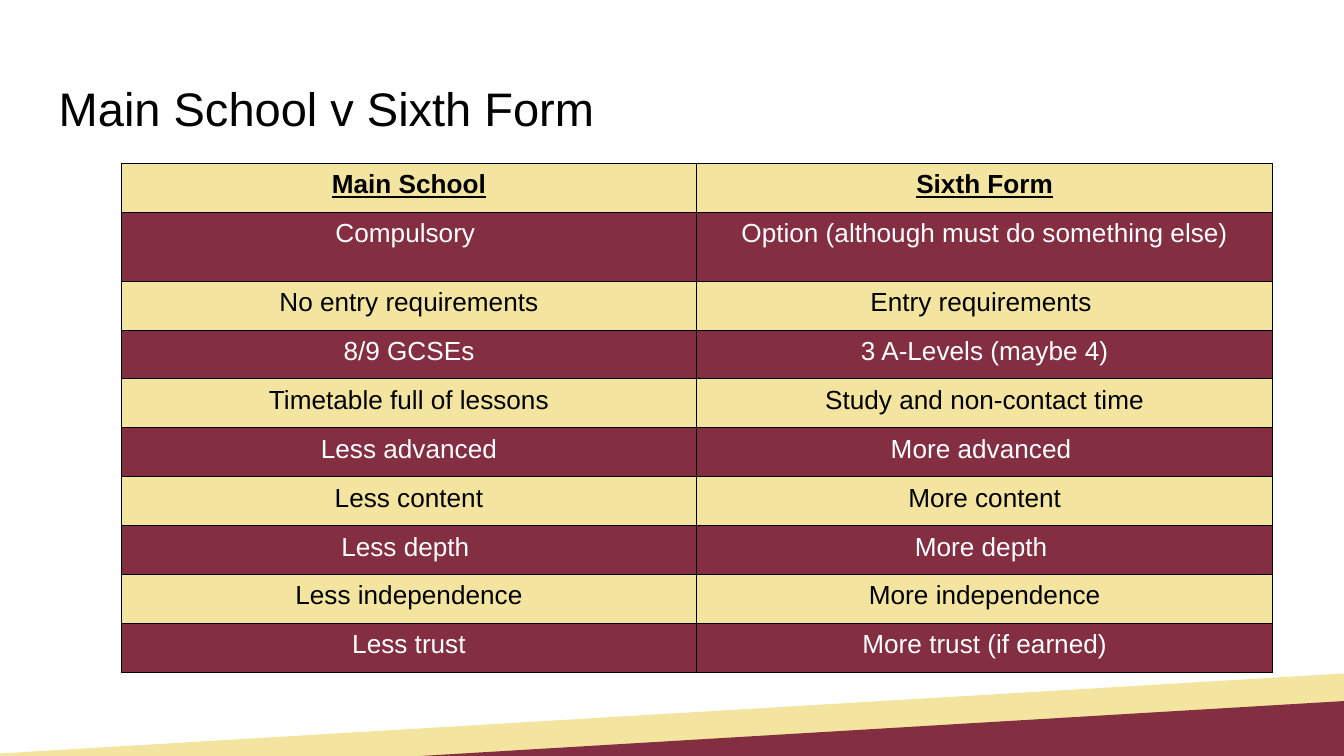
from lxml import etree
from pptx import Presentation
from pptx import util as u
from pptx.dml.color import RGBColor
from pptx.enum import shapes, text
from pptx.oxml.ns import qn

# Content
TITLE = "Main School v Sixth Form"
COMPARISON = [
    ("Main School", "Sixth Form"),
    ("Compulsory ", "Option (although must do something else)"),
    ("No entry requirements", "Entry requirements "),
    ("8/9 GCSEs", "3 A-Levels (maybe 4)"),
    ("Timetable full of lessons", "Study and non-contact time"),
    ("Less advanced", "More advanced "),
    ("Less content", "More content"),
    ("Less depth ", "More depth "),
    ("Less independence", "More independence"),
    ("Less trust", "More trust (if earned)"),
]

# Format
SAND, MAROON, BLACK, WHITE = "F3E49F", "832E41", "000000", "FFFFFF"
BANDS = [(SAND, BLACK), (MAROON, WHITE)]  # fill, text
WEDGES = [(-2.31, 12.73, SAND), (-1.96, 13.23, MAROON)]  # left, top, fill
TABLE_LEFT, TABLE_TOP, TABLE_WIDTH, TABLE_HEIGHT = 2.29, 3.09, 21.76, 9.62
TALL_ROW, TALL_HEIGHT = 1, 1.3


def paint(fill, color):
    fill.solid()
    fill.fore_color.rgb = RGBColor.from_string(color)


def write(frame, words, size=14, color=BLACK, bold=False, underline=False,
          align=text.PP_ALIGN.CENTER):
    paragraph = frame.paragraphs[0]
    paragraph.alignment = align
    run = paragraph.add_run()
    run.text = words
    font = run.font
    font.name, font.size = "Arial", u.Pt(size)
    font.bold, font.underline = bold, underline
    font.color.rgb = RGBColor.from_string(color)


def outline(cell, color=BLACK, width=0.5):
    properties = cell._tc.get_or_add_tcPr()
    for position, side in enumerate(("lnL", "lnR", "lnT", "lnB")):
        line = etree.Element(qn(f"a:{side}"), w=str(u.Pt(width)))
        fill = etree.SubElement(line, qn("a:solidFill"))
        etree.SubElement(fill, qn("a:srgbClr"), val=color)
        properties.insert(position, line)


deck = Presentation()
deck.slide_width, deck.slide_height = u.Cm(25.4), u.Cm(14.29)
slide = deck.slides.add_slide(deck.slide_layouts[5])

# Wedges along the bottom edge
for left, top, color in WEDGES:
    wedge = slide.shapes.add_shape(shapes.MSO_SHAPE.ISOSCELES_TRIANGLE,
                                   u.Cm(left), u.Cm(top), u.Cm(30.28), u.Cm(1.65))
    wedge.adjustments[0] = 0.916
    wedge.shadow.inherit = False
    paint(wedge.fill, color)
    wedge.line.fill.background()

# Title
title = slide.shapes.title
title.left, title.top = u.Cm(0.86), u.Cm(1.24)
title.width, title.height = u.Cm(23.67), u.Cm(1.6)
frame = title.text_frame
frame.margin_left = frame.margin_right = u.Cm(0.25)
frame.margin_top = frame.margin_bottom = u.Cm(0.25)
frame.vertical_anchor = text.MSO_ANCHOR.MIDDLE
frame.auto_size = text.MSO_AUTO_SIZE.NONE
write(frame, TITLE, size=25.2, align=text.PP_ALIGN.LEFT)

# Comparison table
comparison = slide.shapes.add_table(
    len(COMPARISON), 2, u.Cm(TABLE_LEFT), u.Cm(TABLE_TOP),
    u.Cm(TABLE_WIDTH), u.Cm(TABLE_HEIGHT)).table
row_height = (TABLE_HEIGHT - TALL_HEIGHT) / (len(COMPARISON) - 1)
for r, entries in enumerate(COMPARISON):
    comparison.rows[r].height = u.Cm(TALL_HEIGHT if r == TALL_ROW else row_height)
    band, ink = BANDS[r % 2]
    for c, entry in enumerate(entries):
        cell = comparison.cell(r, c)
        paint(cell.fill, band)
        outline(cell)
        write(cell.text_frame, entry, color=ink, bold=r == 0, underline=r == 0)

deck.save("out.pptx")
